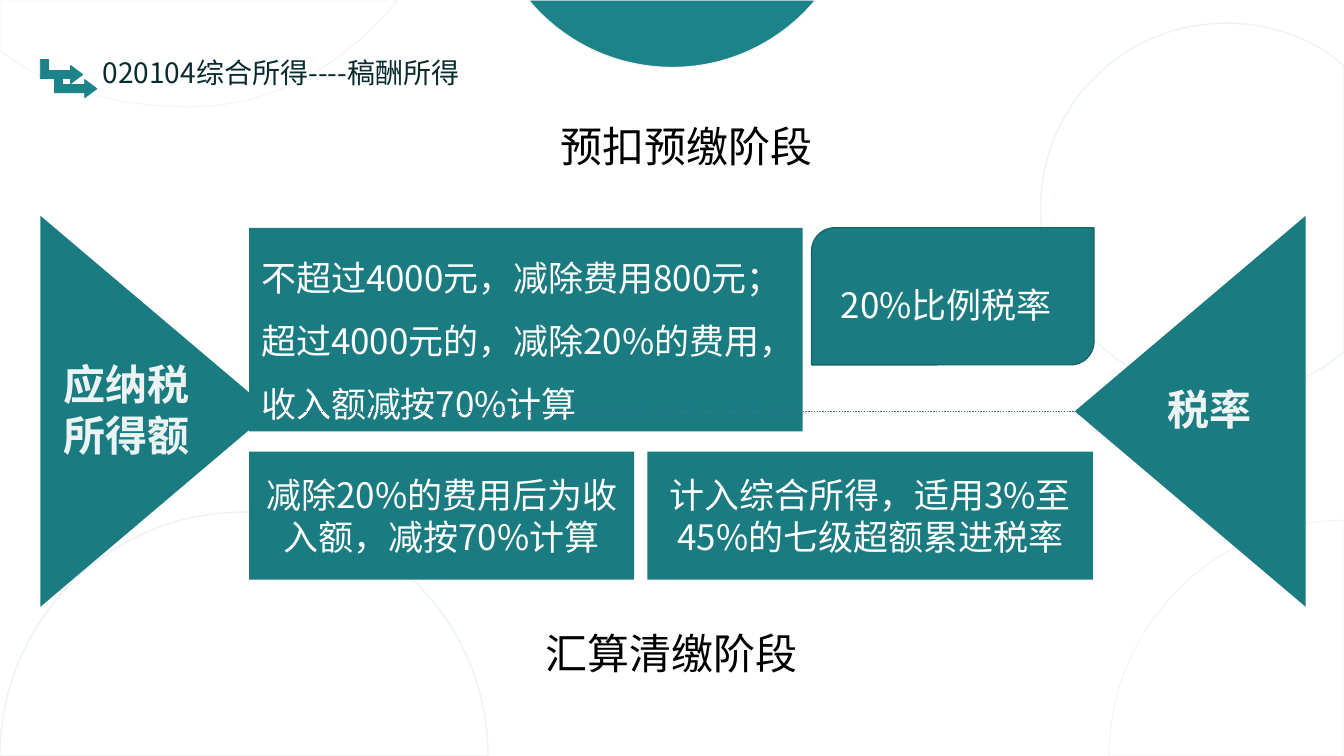
from lxml import etree
from pptx import Presentation
from pptx.dml.color import RGBColor
from pptx.enum.dml import MSO_LINE
from pptx.enum.shapes import MSO_CONNECTOR, MSO_SHAPE as Shape
from pptx.enum.text import MSO_ANCHOR as Anchor, PP_ALIGN as Align
from pptx.oxml.ns import qn
from pptx.util import Inches, Pt

FONT = "Noto Sans CJK SC"
COLORS = {
    "panel": "1A7B80", "accent": "1C8388", "edge": "156569", "pale": "ECF3F4",
    "rim": "F2F2F2", "dots": "41719C", "title": "092B2D", "white": "FFFFFF", "black": "000000",
}
PAINT = {name: RGBColor.from_string(value) for name, value in COLORS.items()}

deck = Presentation()
deck.slide_width, deck.slide_height = Inches(13.33), Inches(7.5)
slide = deck.slides.add_slide(deck.slide_layouts[6])
shapes = slide.shapes


def outline(steps, fill, line=None, width=1):
    """Closed outline; a step is a point (x, y) or a cubic curve of three points."""
    corners = [(Inches(step[-2]), Inches(step[-1])) for step in steps]
    builder = shapes.build_freeform(*corners[0])
    builder.add_line_segments(corners[1:], close=True)
    shape = builder.convert_to_shape()
    # Turn the segments that have control points into curves
    segments = list(shape._element.iter(qn("a:lnTo")))
    for segment, step in zip(segments, steps[1:]):
        if len(step) == 6:
            curve = etree.Element(qn("a:cubicBezTo"))
            for x, y in zip(step[::2], step[1::2]):
                etree.SubElement(curve, qn("a:pt"), x=str(Inches(x) - shape.left),
                                 y=str(Inches(y) - shape.top))
            segment.getparent().replace(segment, curve)
    shape.shadow.inherit = False
    shape.fill.solid()
    shape.fill.fore_color.rgb = PAINT[fill]
    if line:
        shape.line.color.rgb = PAINT[line]
        shape.line.width = Pt(width)
    else:
        shape.line.fill.background()


def write(shape, lines, size, color, align=Align.LEFT, spacing=None, bold=False, wrap=True):
    frame = shape.text_frame
    frame.word_wrap = wrap
    frame.text = "\n".join(lines)
    for paragraph in frame.paragraphs:
        paragraph.alignment = align
        paragraph.line_spacing = spacing
        font = paragraph.font
        font.size, font.bold, font.name = Pt(size), bold, FONT
        font.color.rgb = PAINT[color]
        defaults = paragraph._p.pPr.find(qn("a:defRPr"))
        etree.SubElement(defaults, qn("a:ea"), typeface=FONT)


# Background circles, cut at the slide edges
outline([(0, 7.5), (0, 6.16, 1.08, 5.08, 2.42, 5.08), (3.76, 5.08, 4.84, 6.16, 4.84, 7.5)],
        "white", "pale")
outline([(0, 0.5), (0, 0), (3.94, 0), (3.94, 0, 3.19, 1.06, 1.89, 1.06),
         (0.59, 1.06, 0.01, 0.5, 0, 0.5)], "white", "pale", 0.6)
outline([(13.33, 5.16), (13.33, 7.5), (11, 7.5), (11, 6.29, 11.93, 5.29, 13.11, 5.17)],
        "white", "pale", 0.6)
outline([(5.24, 0), (5.58, 0.41, 6.09, 0.67, 6.67, 0.67), (7.24, 0.67, 7.75, 0.41, 8.09, 0)],
        "accent", "rim")
outline([(12.16, 0.23), (12.54, 0.23, 12.9, 0.34, 13.19, 0.54), (13.33, 0.65), (13.33, 3.49),
         (13.19, 3.6), (12.9, 3.8, 12.54, 3.91, 12.16, 3.91),
         (11.14, 3.91, 10.32, 3.09, 10.32, 2.07), (10.32, 1.05, 11.14, 0.23, 12.16, 0.23)],
        "white", "pale")

# Title with its pair of bent arrows
BENT_ARROW = [(0, 0), (0.08, 0), (0.08, 0.11), (0.3, 0.11), (0.3, 0.06), (0.42, 0.15),
              (0.3, 0.24), (0.3, 0.19), (0, 0.19)]
title = shapes.add_textbox(*map(Inches, (0.92, 0.5, 3.89, 0.42)))
write(title, ["020104综合所得----稿酬所得"], 20, "title")
for shift in (0, 0.14):
    outline([(0.4 + shift + x, 0.59 + shift + y) for x, y in BENT_ARROW], "accent", "accent", 0.6)

# Side triangles pointing inwards
AXIS, HALF_HEIGHT = 4.08, 1.94
for base, tip in ((0.4, 2.69), (12.95, 10.66)):
    outline([(base, AXIS - HALF_HEIGHT), (tip, AXIS), (base, AXIS + HALF_HEIGHT)], "panel")

# Panels: one row per stage, the closing stage name and the flat rate
PREPAY_TOP, SETTLE_TOP, SETTLE_HEIGHT = 2.26, 4.48, 1.27
card = shapes.add_shape(Shape.ROUND_2_DIAG_RECTANGLE,
                        *map(Inches, (8.05, PREPAY_TOP, 2.8, 1.36)))
card.shadow.inherit = False
card.adjustments[0], card.adjustments[1] = 0.17, 0
card.fill.solid()
card.fill.fore_color.rgb = PAINT["panel"]
card.line.color.rgb = PAINT["edge"]
card.line.width = Pt(1)

panels = [
    (2.47, PREPAY_TOP, 5.49, 2.02, "panel", "white", 25, Align.LEFT, 1.5,
     ["不超过4000元，减除费用800元；", "超过4000元的，减除20%的费用，收入额减按70%计算"]),
    (2.47, SETTLE_TOP, 3.82, SETTLE_HEIGHT, "panel", "white", 25, Align.CENTER, None,
     ["减除20%的费用后为收入额，减按70%计算"]),
    (6.42, SETTLE_TOP, 4.42, SETTLE_HEIGHT, "panel", "white", 25, Align.CENTER, None,
     ["计入综合所得，适用3%至45%的七级超额累进税率"]),
    (5.29, 5.84, 3.04, SETTLE_HEIGHT, "white", "black", 30, Align.LEFT, None, ["汇算清缴阶段"]),
    (8.07, 2.6, 2.63, 0.67, "panel", "white", 25, Align.CENTER, 1.4, ["20%比例税率"]),
]
for left, top, width, height, fill, color, size, align, spacing, lines in panels:
    panel = shapes.add_shape(Shape.RECTANGLE, *map(Inches, (left, top, width, height)))
    panel.shadow.inherit = False
    panel.fill.solid()
    panel.fill.fore_color.rgb = PAINT[fill]
    panel.line.fill.background()
    frame = panel.text_frame
    frame.vertical_anchor = Anchor.MIDDLE
    frame.margin_left = frame.margin_right = frame.margin_top = frame.margin_bottom = Inches(0.12)
    write(panel, lines, size, color, align, spacing)

# Dotted axis between the triangles
axis = shapes.add_connector(MSO_CONNECTOR.STRAIGHT, *map(Inches, (2.67, AXIS, 10.66, AXIS)))
axis.line.color.rgb = PAINT["dots"]
axis.line.width = Pt(1)
axis.line.dash_style = MSO_LINE.ROUND_DOT
etree.SubElement(axis._element.spPr, qn("a:effectLst"))

# Headings on the triangles and above the first row
headings = [
    ("应纳税所得额", 0.53, 3.51, 1.81, 1.08, "pale", True, True),
    ("税率", 11.48, 3.76, 1.25, 0.59, "pale", True, True),
    ("预扣预缴阶段", 5.46, 1.15, 2.71, 0.59, "black", False, False),
]
for words, left, top, width, height, color, bold, wrap in headings:
    heading = shapes.add_textbox(*map(Inches, (left, top, width, height)))
    write(heading, [words], 30, color, bold=bold, wrap=wrap)

deck.save("out.pptx")
